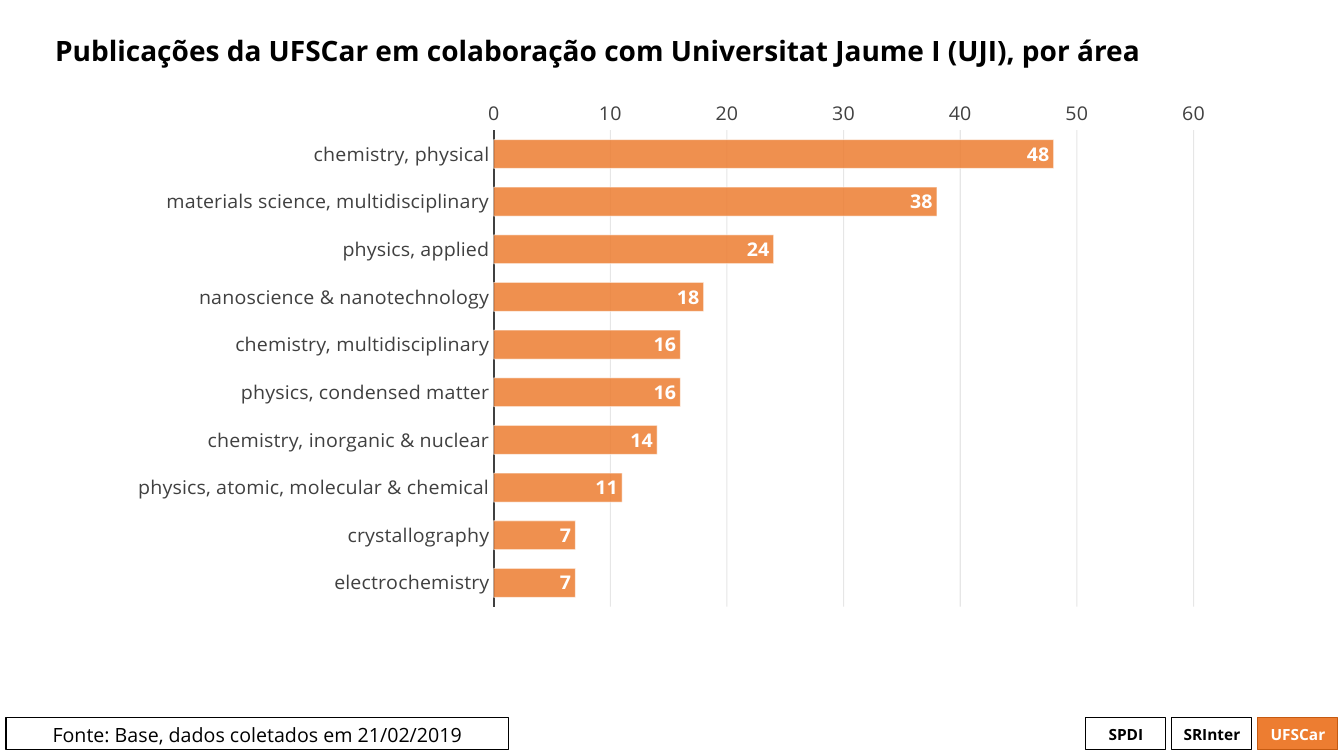
import pptx
import pptx.chart.data
import pptx.dml.color
import pptx.enum.chart
import pptx.enum.shapes
import pptx.enum.text
import pptx.oxml
import pptx.oxml.ns
import pptx.util

SLIDE_WIDTH, SLIDE_HEIGHT = 1344, 756
EMU_PER_PX = 12192000 / SLIDE_WIDTH
FONT = "Open Sans"
COLORS = {
    "black": "000000",
    "white": "FFFFFF",
    "orange": "ED7D31",
    "dark_orange": "C55A11",
    "axis": "404040",
    "grid": "0D0D0D",
}
AREAS = {
    "chemistry, physical": 48,
    "materials science, multidisciplinary": 38,
    "physics, applied": 24,
    "nanoscience & nanotechnology": 18,
    "chemistry, multidisciplinary": 16,
    "physics, condensed matter": 16,
    "chemistry, inorganic & nuclear": 14,
    "physics, atomic, molecular & chemical": 11,
    "crystallography": 7,
    "electrochemistry": 7,
}


def px(length):
    return pptx.util.Emu(round(length * EMU_PER_PX))


def color(name):
    return pptx.dml.color.RGBColor.from_string(COLORS[name])


def style_font(font, size, color_name, bold=False):
    font.name = FONT
    font.size = pptx.util.Pt(size)
    font.bold = bold
    font.color.rgb = color(color_name)


def style_line(line, color_name, width=0.75):
    line.color.rgb = color(color_name)
    line.width = pptx.util.Pt(width)


def set_opacity(color_elements, percent):
    for element in color_elements:
        alpha = pptx.oxml.parse_xml(
            f'<a:alpha {pptx.oxml.ns.nsdecls("a")} val="{percent * 1000}"/>')
        element.append(alpha)


def set_plot_area(plot_area, fractions):
    """Fix the inner plot rectangle as fractions of the chart."""
    for layout in plot_area.xpath("c:layout"):
        plot_area.remove(layout)
    sizes = "".join(f'<c:{key} val="{value}"/>' for key, value in fractions.items())
    plot_area.insert(0, pptx.oxml.parse_xml(
        f'<c:layout {pptx.oxml.ns.nsdecls("c")}><c:manualLayout>'
        '<c:layoutTarget val="inner"/><c:xMode val="edge"/><c:yMode val="edge"/>'
        f'{sizes}</c:manualLayout></c:layout>'))


def add_title(slide, left, top, width, height):
    title = slide.shapes.title
    title.left, title.top, title.width, title.height = map(px, (left, top, width, height))
    frame = title.text_frame
    frame.text = "Publicações da UFSCar em colaboração com Universitat Jaume I (UJI), por área"
    frame.auto_size = pptx.enum.text.MSO_AUTO_SIZE.NONE
    frame.vertical_anchor = pptx.enum.text.MSO_ANCHOR.MIDDLE
    paragraph = frame.paragraphs[0]
    paragraph.alignment = pptx.enum.text.PP_ALIGN.LEFT
    paragraph.line_spacing = 0.9
    style_font(paragraph.font, 20, "black", bold=True)


def add_area_chart(slide, left, top, width, height):
    data = pptx.chart.data.CategoryChartData()
    data.categories = list(AREAS)
    data.add_series("Series 1", list(AREAS.values()))
    chart = slide.shapes.add_chart(
        pptx.enum.chart.XL_CHART_TYPE.BAR_CLUSTERED,
        *map(px, (left, top, width, height)), data).chart
    chart.has_legend = False
    chart.has_title = False
    style_font(chart.font, 14, "black")

    # Axes, with the first area on top and the values at the bottom
    areas, values = chart.category_axis, chart.value_axis
    for axis in (areas, values):
        axis.major_tick_mark = pptx.enum.chart.XL_TICK_MARK.NONE
        axis.minor_tick_mark = pptx.enum.chart.XL_TICK_MARK.NONE
        style_font(axis.tick_labels.font, 14, "axis")
    areas.reverse_order = True
    areas.crosses = pptx.enum.chart.XL_AXIS_CROSSES.MAXIMUM
    areas.has_major_gridlines = False
    style_line(areas.format.line, "axis", 1.5)
    values.minimum_scale, values.maximum_scale, values.major_unit = 0, 60, 10
    values.format.line.fill.background()
    values.has_major_gridlines = True
    style_line(values.major_gridlines.format.line, "grid")

    # Bars and their labels
    plot = chart.plots[0]
    plot.gap_width = 65
    plot.vary_by_categories = False
    series = plot.series[0]
    series.format.fill.solid()
    series.format.fill.fore_color.rgb = color("orange")
    style_line(series.format.line, "white")
    labels = series.data_labels
    labels.show_value = True
    labels.position = pptx.enum.chart.XL_LABEL_POSITION.INSIDE_END
    style_font(labels.font, 14, "white", bold=True)

    # Transparency and plot rectangle
    plot_area = chart._chartSpace.xpath("c:chart/c:plotArea")[0]
    set_opacity(plot_area.xpath("c:valAx/c:majorGridlines//a:srgbClr"), 10)
    set_opacity(plot_area.xpath(".//c:ser/c:spPr/a:solidFill/a:srgbClr"), 85)
    set_opacity(plot_area.xpath(".//c:ser/c:spPr/a:ln//a:srgbClr"), 50)
    set_plot_area(plot_area, {"x": 0.34, "y": 0.02, "w": 0.63, "h": 0.89})


def add_label_box(slide, text, box, size, text_color="black", fill=None,
                  line="black", bold=False):
    shape = slide.shapes.add_shape(
        pptx.enum.shapes.MSO_SHAPE.RECTANGLE, *map(px, box))
    shape.shadow.inherit = False
    if fill:
        shape.fill.solid()
        shape.fill.fore_color.rgb = color(fill)
    else:
        shape.fill.background()
    style_line(shape.line, line)
    frame = shape.text_frame
    frame.text = text
    frame.word_wrap = True
    frame.margin_left = frame.margin_right = px(4)
    paragraph = frame.paragraphs[0]
    paragraph.alignment = pptx.enum.text.PP_ALIGN.CENTER
    style_font(paragraph.font, size, text_color, bold)
    return shape


def add_footer(slide, left, top, width, height):
    # Data source on the left
    source = add_label_box(slide, "Fonte: Base, dados coletados em 21/02/2019",
                           (left, top, 503, height), 14)
    source.text_frame.vertical_anchor = pptx.enum.text.MSO_ANCHOR.TOP

    # Unit tags, aligned to the right
    tag_width, pitch = 80, 86
    tags = {
        "SPDI": {},
        "SRInter": {},
        "UFSCar": {"text_color": "white", "fill": "orange", "line": "dark_orange"},
    }
    first = left + width - tag_width - pitch * (len(tags) - 1)
    for index, (text, colors) in enumerate(tags.items()):
        box = (first + index * pitch, top, tag_width, height)
        add_label_box(slide, text, box, 11, bold=True, **colors)


def main():
    presentation = pptx.Presentation()
    presentation.slide_width = px(SLIDE_WIDTH)
    presentation.slide_height = px(SLIDE_HEIGHT)
    slide = presentation.slides.add_slide(presentation.slide_layouts[5])
    add_footer(slide, 6, 718, 1332, 32)
    add_title(slide, 45, 6, 1251, 92)
    add_area_chart(slide, 116, 100, 1111, 555)
    presentation.save("out.pptx")


if __name__ == "__main__":
    main()
